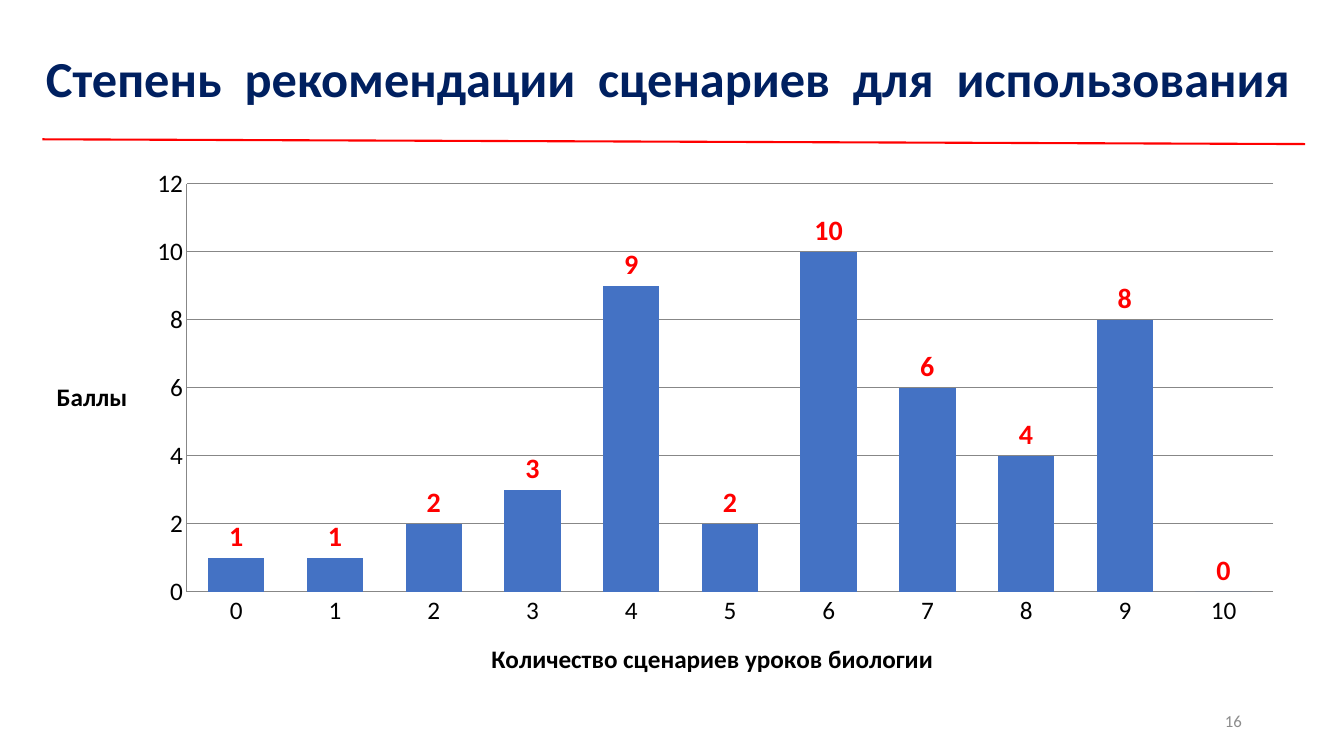
import pptx
import pptx.chart.data
import pptx.dml.color
import pptx.enum.chart
import pptx.enum.shapes
import pptx.enum.text
import pptx.oxml
import pptx.oxml.ns
import pptx.util
from pptx.util import Cm

RGBColor = pptx.dml.color.RGBColor
NAVY = RGBColor(0x00, 0x20, 0x60)
RED = RGBColor(0xFF, 0x00, 0x00)
BLUE = RGBColor(0x44, 0x72, 0xC4)
GRAY = RGBColor(0x8C, 0x8C, 0x8C)
GRID_GRAY = RGBColor(0x87, 0x87, 0x87)
BLACK = RGBColor(0x00, 0x00, 0x00)

ALIGN = pptx.enum.text.PP_ALIGN
SCORES = (1, 1, 2, 3, 9, 2, 10, 6, 4, 8, 0)
PLOT_LAYOUT = {"x": 0.12, "y": 0.05, "w": 0.86, "h": 0.75}


def format_font(font, color, **values):
    """Set the font family, the colour and any further font attributes."""
    font.name = "Calibri"
    font.color.rgb = color
    for name, value in values.items():
        setattr(font, name, value)


def add_text(page, text, place, color, para_format, **font_values):
    box = page.shapes.add_textbox(*place)
    frame = box.text_frame
    frame.word_wrap = True
    frame.vertical_anchor = pptx.enum.text.MSO_ANCHOR.MIDDLE
    para = frame.paragraphs[0]
    for name, value in para_format.items():
        setattr(para, name, value)
    span = para.add_run()
    span.text = text
    format_font(span.font, color, **font_values)


def add_rule(page, start, end):
    rule = page.shapes.add_connector(
        pptx.enum.shapes.MSO_CONNECTOR.STRAIGHT, *start, *end)
    rule.line.color.rgb = RED
    rule.line.width = pptx.util.Pt(1.5)
    properties = rule.element.spPr
    properties.append(properties.makeelement(pptx.oxml.ns.qn("a:effectLst"), {}))


def place_plot(chart):
    """Fix the inner plot area as fractions of the chart frame."""
    plot_area = chart.element.chart.plotArea
    for old_layout in plot_area.findall(pptx.oxml.ns.qn("c:layout")):
        plot_area.remove(old_layout)
    modes = '<c:xMode val="edge"/><c:yMode val="edge"/>'
    sides = "".join(f'<c:{side} val="{value}"/>' for side, value in PLOT_LAYOUT.items())
    plot_area.insert(0, pptx.oxml.parse_xml(
        f'<c:layout {pptx.oxml.ns.nsdecls("c")}><c:manualLayout>'
        f'<c:layoutTarget val="inner"/>{modes}{sides}</c:manualLayout></c:layout>'))


def format_axis(axis, title, gridlines):
    axis.has_major_gridlines = gridlines
    axis.major_tick_mark = pptx.enum.chart.XL_TICK_MARK.NONE
    axis.format.line.color.rgb = GRID_GRAY
    frame = axis.axis_title.text_frame
    span = frame.paragraphs[0].add_run()
    span.text = title
    format_font(span.font, BLACK, size=pptx.util.Pt(18), bold=True)
    body = frame._txBody.bodyPr
    for name, value in {"rot": "0", "vert": "horz"}.items():
        body.set(name, value)


def add_score_chart(page, place):
    data = pptx.chart.data.CategoryChartData()
    data.categories = [str(score) for score in range(len(SCORES))]
    data.add_series("Series 1", SCORES)
    chart = page.shapes.add_chart(
        pptx.enum.chart.XL_CHART_TYPE.COLUMN_CLUSTERED, *place, data).chart
    chart.has_legend = False
    chart.has_title = False
    format_font(chart.font, BLACK, size=pptx.util.Pt(18))
    place_plot(chart)

    format_axis(chart.category_axis, "Количество сценариев уроков биологии ", False)
    scale = chart.value_axis
    format_axis(scale, "Баллы", True)
    scale.major_gridlines.format.line.color.rgb = GRID_GRAY
    for name, value in {"minimum_scale": 0, "maximum_scale": 12, "major_unit": 2}.items():
        setattr(scale, name, value)

    plot = chart.plots[0]
    plot.gap_width = 75
    plot.vary_by_categories = False
    fill = plot.series[0].format.fill
    fill.solid()
    fill.fore_color.rgb = BLUE
    plot.has_data_labels = True
    labels = plot.data_labels
    labels.show_value = True
    labels.position = pptx.enum.chart.XL_LABEL_POSITION.OUTSIDE_END
    format_font(labels.font, RED, size=pptx.util.Pt(20), bold=True)


def main():
    deck = pptx.Presentation()
    deck.slide_width, deck.slide_height = Cm(33.87), Cm(19.05)
    page = deck.slides.add_slide(deck.slide_layouts[6])
    add_text(page, "16", (Cm(23.93), Cm(17.65), Cm(7.62), Cm(1.02)), GRAY,
             {"alignment": ALIGN.RIGHT}, size=pptx.util.Pt(12))
    add_score_chart(page, (Cm(0.89), Cm(3.94), Cm(31.83), Cm(13.72)))
    add_rule(page, (Cm(1.07), Cm(3.51)), (Cm(32.89), Cm(3.63)))
    add_text(page, "Степень  рекомендации  сценариев  для  использования",
             (Cm(0.74), Cm(1.07), Cm(32.21), Cm(1.93)), NAVY,
             {"alignment": ALIGN.CENTER, "line_spacing": 0.9},
             size=pptx.util.Pt(36), bold=True)
    deck.save("out.pptx")


if __name__ == "__main__":
    main()
